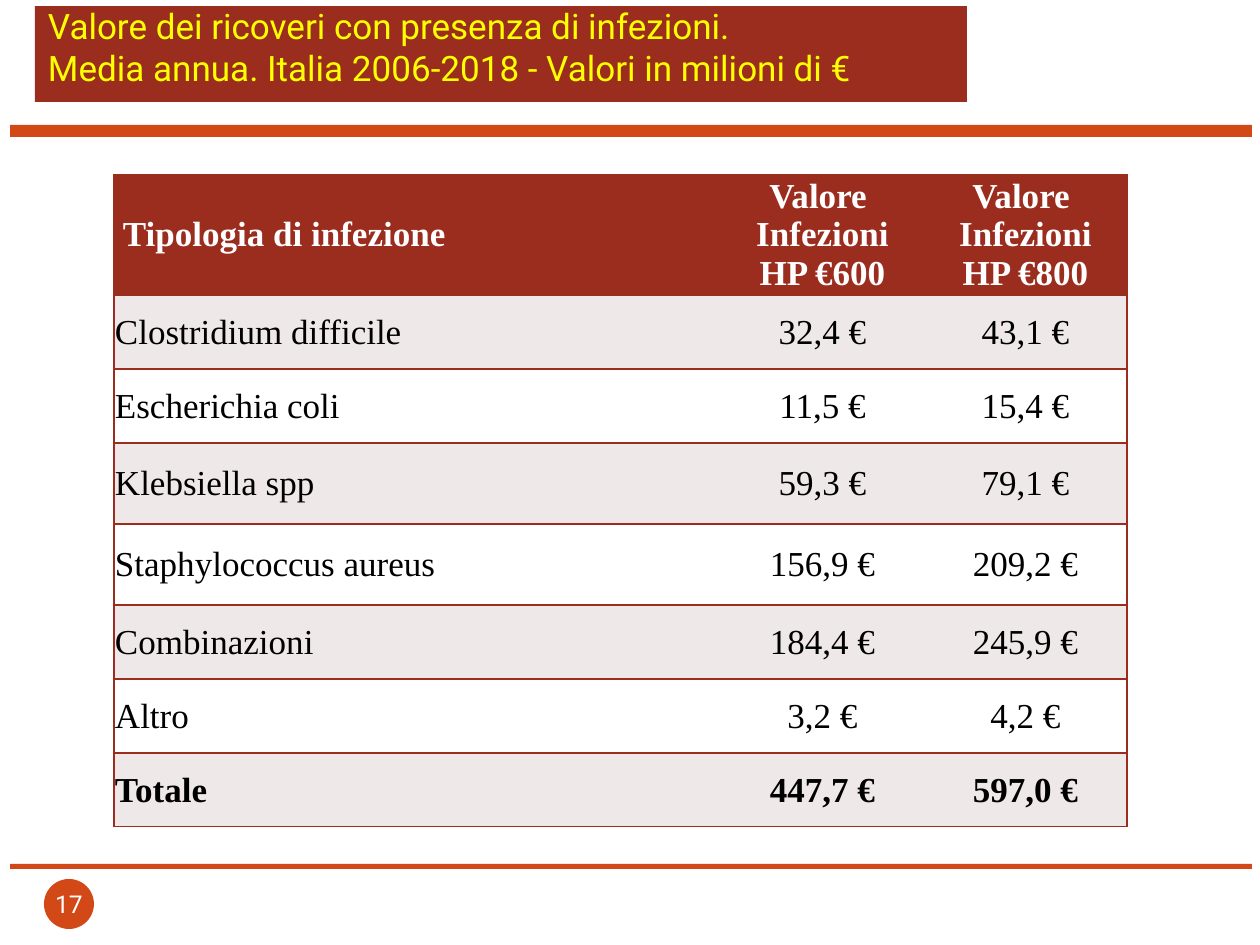
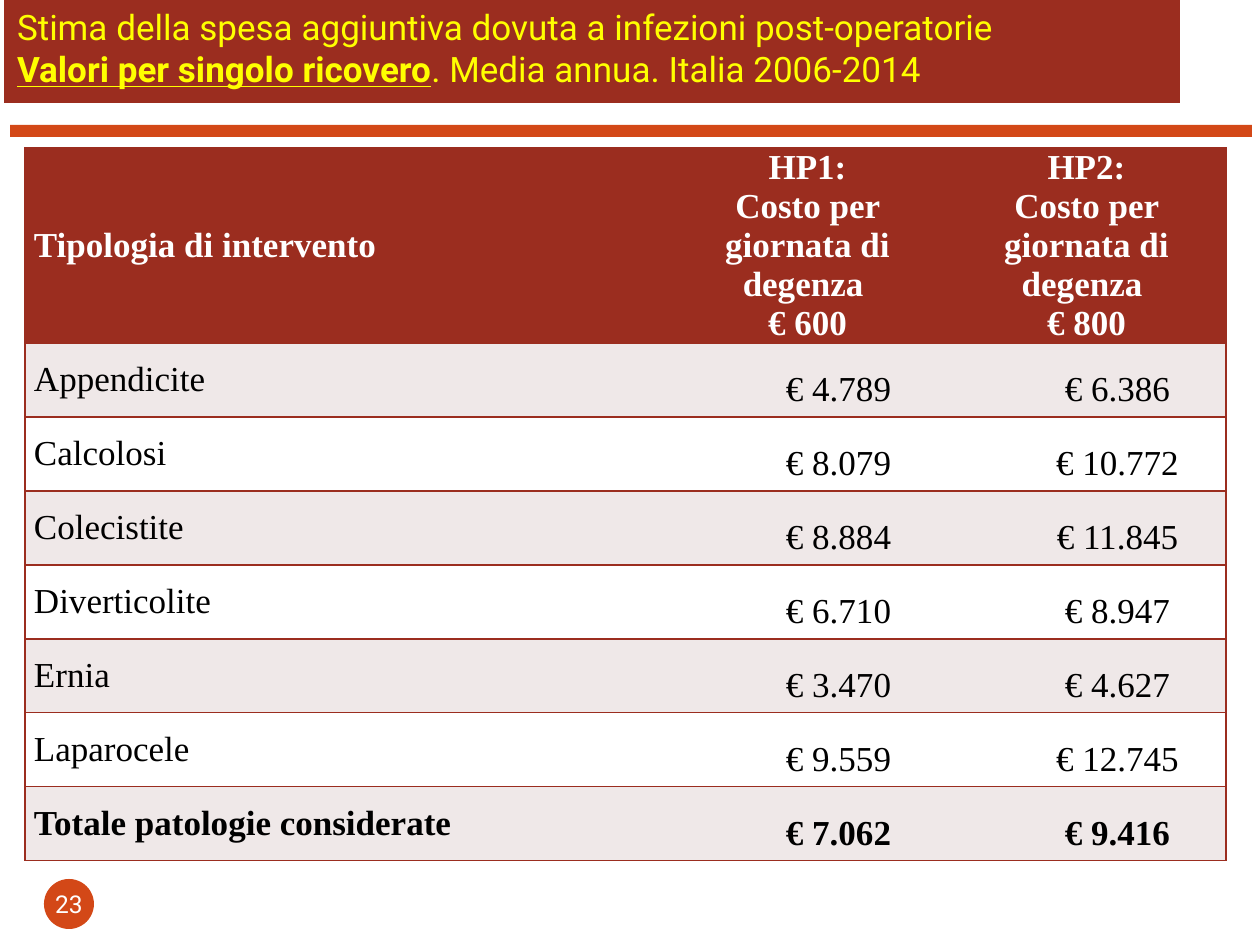
from dataclasses import dataclass

from lxml import etree
from pptx import Presentation
from pptx.dml.color import RGBColor
from pptx.enum.shapes import MSO_SHAPE
from pptx.enum.text import MSO_ANCHOR, PP_ALIGN
from pptx.oxml.ns import qn
from pptx.util import Emu, Pt

RECTANGLE, OVAL = MSO_SHAPE.RECTANGLE, MSO_SHAPE.OVAL
MIDDLE, BOTTOM = MSO_ANCHOR.MIDDLE, MSO_ANCHOR.BOTTOM
LEFT, CENTER, JUSTIFY = PP_ALIGN.LEFT, PP_ALIGN.CENTER, PP_ALIGN.JUSTIFY
EMU_PER_PX = 914400 / 126
BLANK_LAYOUT = 6


@dataclass(frozen=True)
class Theme:
    brick: str = "9B2D1F"
    orange: str = "D34817"
    yellow: str = "FFFF00"
    white: str = "FFFFFF"
    black: str = "000000"
    stripe: str = "EFE8E8"
    title_font: str = "Roboto"
    table_font: str = "Times New Roman"
    text_size: int = 20
    number_size: int = 14
    border_width: int = 1


THEME = Theme()


@dataclass(frozen=True)
class BodyStyle:
    """How the cells below the header row are set."""
    margins: tuple
    label_align: int
    value_indent: int = 0
    value_spacing: float = 1.0


HEADER_MARGINS = (9, 0, 9, 0)
TIGHT_BODY = BodyStyle((1, 1, 1, 0), LEFT)
INDENTED_BODY = BodyStyle(HEADER_MARGINS, JUSTIFY, value_indent=62, value_spacing=1.5)

INFECTION_ROWS = [
    ("Tipologia di infezione", "Valore \nInfezioni\nHP €600", "Valore \nInfezioni\nHP €800"),
    ("Clostridium difficile", "32,4 €", "43,1 €"),
    ("Escherichia coli", "11,5 €", "15,4 €"),
    ("Klebsiella spp", "59,3 €", "79,1 €"),
    ("Staphylococcus aureus", "156,9 €", "209,2 €"),
    ("Combinazioni", "184,4 €", "245,9 €"),
    ("Altro", "3,2 €", "4,2 €"),
    ("Totale", "447,7 €", "597,0 €"),
]
SURGERY_ROWS = [
    ("Tipologia di intervento",
     "HP1:\nCosto per giornata di degenza \n€ 600",
     "HP2:\nCosto per giornata di degenza \n€ 800"),
    ("Appendicite", "€ 4.789", "€ 6.386"),
    ("Calcolosi", "€ 8.079", "€ 10.772"),
    ("Colecistite", "€ 8.884", "€ 11.845"),
    ("Diverticolite", "€ 6.710", "€ 8.947"),
    ("Ernia", "€ 3.470", "€ 4.627"),
    ("Laparocele", "€ 9.559", "€ 12.745"),
    ("Totale patologie considerate", "€ 7.062", "€ 9.416"),
]


def px(length):
    return Emu(round(length * EMU_PER_PX))


def rgb(color):
    return RGBColor.from_string(color)


def style_font(font, name, size, color, bold=False):
    font.name, font.size, font.bold = name, Pt(size), bold
    font.color.rgb = rgb(color)


def set_margins(holder, margins):
    """Set left, top, right and bottom margins of a text frame or a cell."""
    (holder.margin_left, holder.margin_top,
     holder.margin_right, holder.margin_bottom) = map(px, margins)


def add_block(page, kind, left, top, width, height, color):
    block = page.shapes.add_shape(kind, px(left), px(top), px(width), px(height))
    block.shadow.inherit = False
    block.fill.solid()
    block.fill.fore_color.rgb = rgb(color)
    block.line.fill.background()
    return block


def add_title(page, frame, lines):
    """Each line is a list of (text, emphasised) spans."""
    text_frame = add_block(page, RECTANGLE, *frame, THEME.brick).text_frame
    text_frame.word_wrap = True
    text_frame.vertical_anchor = BOTTOM
    set_margins(text_frame, (13, 6, 13, 13))
    para = text_frame.paragraphs[0]
    para.alignment = LEFT
    for index, line in enumerate(lines):
        if index:
            para.add_line_break()
        for text, emphasised in line:
            span = para.add_run()
            span.text = text
            style_font(span.font, THEME.title_font, THEME.text_size, THEME.yellow, emphasised)
            span.font.underline = emphasised


def add_page_number(page, number):
    text_frame = add_block(page, OVAL, 44, 879, 50, 50, THEME.orange).text_frame
    text_frame.word_wrap = False
    text_frame.vertical_anchor = MIDDLE
    set_margins(text_frame, (0, 0, 0, 0))
    text_frame.text = str(number)
    para = text_frame.paragraphs[0]
    para.alignment = CENTER
    style_font(para.runs[0].font, THEME.title_font, THEME.number_size, THEME.white)


def add_page(deck, number):
    page = deck.slides.add_slide(deck.slide_layouts[BLANK_LAYOUT])
    add_block(page, RECTANGLE, 10, 125, 1242, 12, THEME.orange)
    add_page_number(page, number)
    return page


def set_borders(cell, visible_sides):
    properties = cell._tc.get_or_add_tcPr()
    for side in "LRTB":
        line = etree.SubElement(properties, qn(f"a:ln{side}"), w=str(Pt(THEME.border_width)))
        if side in visible_sides:
            fill = etree.SubElement(line, qn("a:solidFill"))
            etree.SubElement(fill, qn("a:srgbClr"), val=THEME.brick)
        else:
            etree.SubElement(line, qn("a:noFill"))


def fill_cell(cell, text, background, color, bold, align, margins):
    cell.fill.solid()
    cell.fill.fore_color.rgb = rgb(background)
    cell.vertical_anchor = MIDDLE
    set_margins(cell, margins)
    cell.text_frame.text = text
    for para in cell.text_frame.paragraphs:
        para.alignment = align
        for span in para.runs:
            style_font(span.font, THEME.table_font, THEME.text_size, color, bold)


def indent_value(cell, body):
    para = cell.text_frame.paragraphs[0]
    para.line_spacing = body.value_spacing
    properties = para._p.get_or_add_pPr()
    properties.set("marL", "0")
    properties.set("indent", str(px(body.value_indent)))


def add_cost_table(page, left, top, widths, heights, rows, body):
    """Header row first, total row last, stripes on the odd rows."""
    table = page.shapes.add_table(len(rows), len(widths), px(left), px(top),
                                  px(sum(widths)), px(sum(heights))).table
    table.first_row = table.horz_banding = False
    for column, width in zip(table.columns, widths):
        column.width = px(width)
    for row, height in zip(table.rows, heights):
        row.height = px(height)
    last_row, last_column = len(rows) - 1, len(widths) - 1
    for r, texts in enumerate(rows):
        for c, text in enumerate(texts):
            cell = table.cell(r, c)
            set_borders(cell, "TB" + "L" * (c == 0) + "R" * (c == last_column))
            if r == 0:
                fill_cell(cell, text, THEME.brick, THEME.white, True,
                          CENTER if c else LEFT, HEADER_MARGINS)
                continue
            fill_cell(cell, text, THEME.stripe if r % 2 else THEME.white, THEME.black,
                      r == last_row, CENTER if c else body.label_align, body.margins)
            if c and body.value_indent:
                indent_value(cell, body)


def add_infections_page(deck):
    page = add_page(deck, 17)
    add_block(page, RECTANGLE, 10, 864, 1242, 5, THEME.orange)
    add_cost_table(page, 114, 175, (607, 203, 203), (120, 74, 74, 81, 81, 74, 74, 74),
                   INFECTION_ROWS, TIGHT_BODY)
    add_title(page, (35, 6, 932, 96), [
        [("Valore dei ricoveri con presenza di infezioni.", False)],
        [("Media annua. Italia 2006-2018 - Valori in milioni di €", False)],
    ])


def add_surgery_page(deck):
    page = add_page(deck, 23)
    add_title(page, (4, 0, 1176, 103), [
        [("Stima della spesa aggiuntiva dovuta a infezioni post-operatorie", False)],
        [("Valori per singolo ricovero", True), (". Media annua. Italia 2006-2014", False)],
    ])
    add_cost_table(page, 25, 148, (643, 279, 279), (195,) + (74,) * 7,
                   SURGERY_ROWS, INDENTED_BODY)


def main():
    deck = Presentation()
    deck.slide_width, deck.slide_height = px(1260), px(945)
    add_infections_page(deck)
    add_surgery_page(deck)
    deck.save("out.pptx")


if __name__ == "__main__":
    main()
